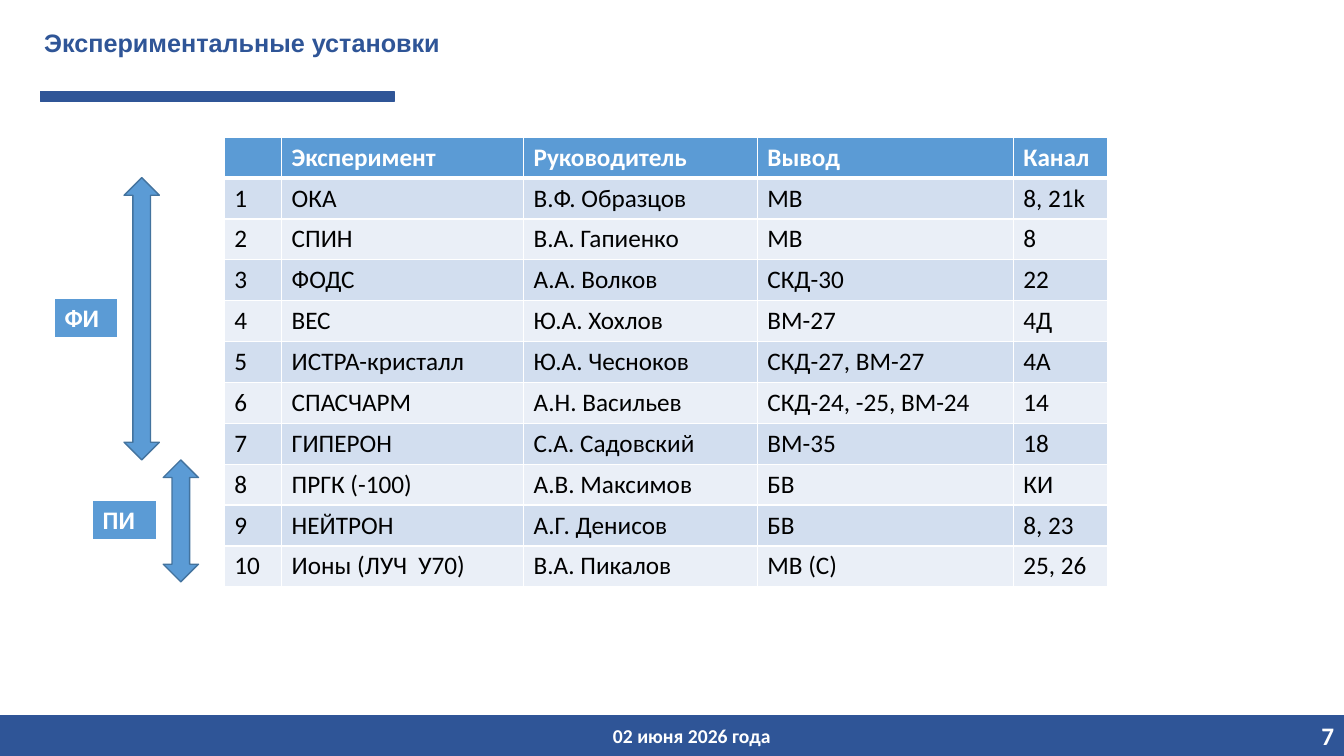
from typing import NamedTuple

from lxml import etree
from pptx import Presentation
from pptx.dml.color import RGBColor
from pptx.enum.shapes import MSO_SHAPE
from pptx.enum.text import MSO_ANCHOR, PP_ALIGN
from pptx.oxml.ns import qn
from pptx.util import Pt

RECT, ARROW = MSO_SHAPE.RECTANGLE, MSO_SHAPE.UP_DOWN_ARROW
LEFT, CENTER, RIGHT = PP_ALIGN.LEFT, PP_ALIGN.CENTER, PP_ALIGN.RIGHT
MIDDLE = MSO_ANCHOR.MIDDLE

COLORS = {
    "navy": "2F5597",
    "blue": "5B9BD5",
    "outline": "43739E",
    "band_dark": "D2DEEF",
    "band_light": "EAEFF7",
    "white": "FFFFFF",
    "black": "000000",
}


class Box(NamedTuple):
    x: float
    y: float
    w: float
    h: float


class Block(NamedTuple):
    kind: MSO_SHAPE
    box: Box
    fill: str
    line: str


class Label(NamedTuple):
    text: str
    box: Box
    size: float
    align: PP_ALIGN
    font: str = "Calibri"
    color: str = "white"
    spacing: float = 1.0


class Grid(NamedTuple):
    x: float
    y: float
    widths: list[float]
    row_height: float
    rows: list[list[str]]


BLOCKS = [
    Block(RECT, Box(0, 511, 960, 29), "navy", "navy"),
    Block(RECT, Box(28.8, 65.5, 252.7, 7.2), "navy", "navy"),
    Block(ARROW, Box(88.6, 126.9, 25.2, 201.6), "blue", "outline"),
    Block(ARROW, Box(116.6, 328.5, 25.2, 87.1), "blue", "outline"),
]

LABELS = [
    Label("Экспериментальные установки", Box(24.5, 0, 668, 64), 18, LEFT,
          "Arial", "navy", 0.9),
    Label("02 июня 2026 года", Box(90.7, 511.2, 807, 28.8), 14, CENTER),
    Label("7", Box(898, 511.2, 62, 28.8), 18, RIGHT),
]

EXPERIMENTS = [
    ["", "Эксперимент", "Руководитель", "Вывод", "Канал"],
    ["1", "ОКА", "В.Ф. Образцов", "МВ", "8, 21k"],
    ["2", "СПИН", "В.А. Гапиенко", "МВ", "8"],
    ["3", "ФОДС", "А.А. Волков", "СКД-30", "22"],
    ["4", "ВЕС", "Ю.А. Хохлов", "ВМ-27", "4Д"],
    ["5", "ИСТРА-кристалл", "Ю.А. Чесноков", "СКД-27, ВМ-27", "4А"],
    ["6", "СПАСЧАРМ", "А.Н. Васильев", "СКД-24, -25, ВМ-24", "14"],
    ["7", "ГИПЕРОН", "С.А. Садовский", "ВМ-35", "18"],
    ["8", "ПРГК (-100)", "А.В. Максимов", "БВ", "КИ"],
    ["9", "НЕЙТРОН", "А.Г. Денисов", "БВ", "8, 23"],
    ["10", "Ионы (ЛУЧ  У70)", "В.А. Пикалов", "МВ (С)", "25, 26"],
]

GRIDS = [
    Grid(160.2, 98, [41, 172.8, 167, 182.9, 67.5], 29.2, EXPERIMENTS),
    Grid(38.9, 213.1, [45.4], 28.8, [["ФИ"]]),
    Grid(66.2, 357.8, [45.4], 28.8, [["ПИ"]]),
]


def rgb(name: str) -> RGBColor:
    return RGBColor.from_string(COLORS[name])


def write(tf, text: str, *, size: float = 18, font: str = "Calibri",
          color: str = "black", bold: bool = False,
          align: PP_ALIGN = LEFT, spacing: float = 1.0) -> None:
    p = tf.paragraphs[0]
    p.alignment = align
    p.line_spacing = spacing
    p.font.size = Pt(size)
    if not text:
        return
    r = p.add_run()
    r.text = text
    r.font.size = Pt(size)
    r.font.name = font
    r.font.bold = bold
    r.font.color.rgb = rgb(color)


def add_block(s, block: Block) -> None:
    sp = s.shapes.add_shape(block.kind, *map(Pt, block.box))
    sp.shadow.inherit = False
    sp.fill.solid()
    sp.fill.fore_color.rgb = rgb(block.fill)
    sp.line.color.rgb = rgb(block.line)
    sp.line.width = Pt(1)


def add_label(s, label: Label) -> None:
    tf = s.shapes.add_textbox(*map(Pt, label.box)).text_frame
    tf.word_wrap = True
    tf.vertical_anchor = MIDDLE
    write(tf, label.text, size=label.size, font=label.font, color=label.color,
          bold=True, align=label.align, spacing=label.spacing)


def set_borders(cell, top: float, bottom: float) -> None:
    tc_pr = cell._tc.get_or_add_tcPr()
    for side, width in (("L", 1), ("R", 1), ("T", top), ("B", bottom)):
        ln = etree.SubElement(tc_pr, qn(f"a:ln{side}"), w=str(Pt(width)))
        fill = etree.SubElement(ln, qn("a:solidFill"))
        etree.SubElement(fill, qn("a:srgbClr"), val=COLORS["white"])


def add_grid(s, grid: Grid) -> None:
    n_rows, n_cols = len(grid.rows), len(grid.widths)
    table = s.shapes.add_table(
        n_rows, n_cols, Pt(grid.x), Pt(grid.y),
        Pt(sum(grid.widths)), Pt(grid.row_height * n_rows)).table
    for col, width in zip(table.columns, grid.widths):
        col.width = Pt(width)
    for i, texts in enumerate(grid.rows):
        table.rows[i].height = Pt(grid.row_height)
        header = i == 0
        band = "band_dark" if i % 2 else "band_light"
        for j, text in enumerate(texts):
            cell = table.cell(i, j)
            set_borders(cell, 3 if i == 1 else 1, 3 if header else 1)
            cell.fill.solid()
            cell.fill.fore_color.rgb = rgb("blue" if header else band)
            write(cell.text_frame, text, bold=header,
                  color="white" if header else "black")


def main() -> None:
    prs = Presentation()
    prs.slide_width, prs.slide_height = Pt(960), Pt(540)
    s = prs.slides.add_slide(prs.slide_layouts[6])
    for block in BLOCKS:
        add_block(s, block)
    for label in LABELS:
        add_label(s, label)
    for grid in GRIDS:
        add_grid(s, grid)
    prs.save("out.pptx")


if __name__ == "__main__":
    main()
